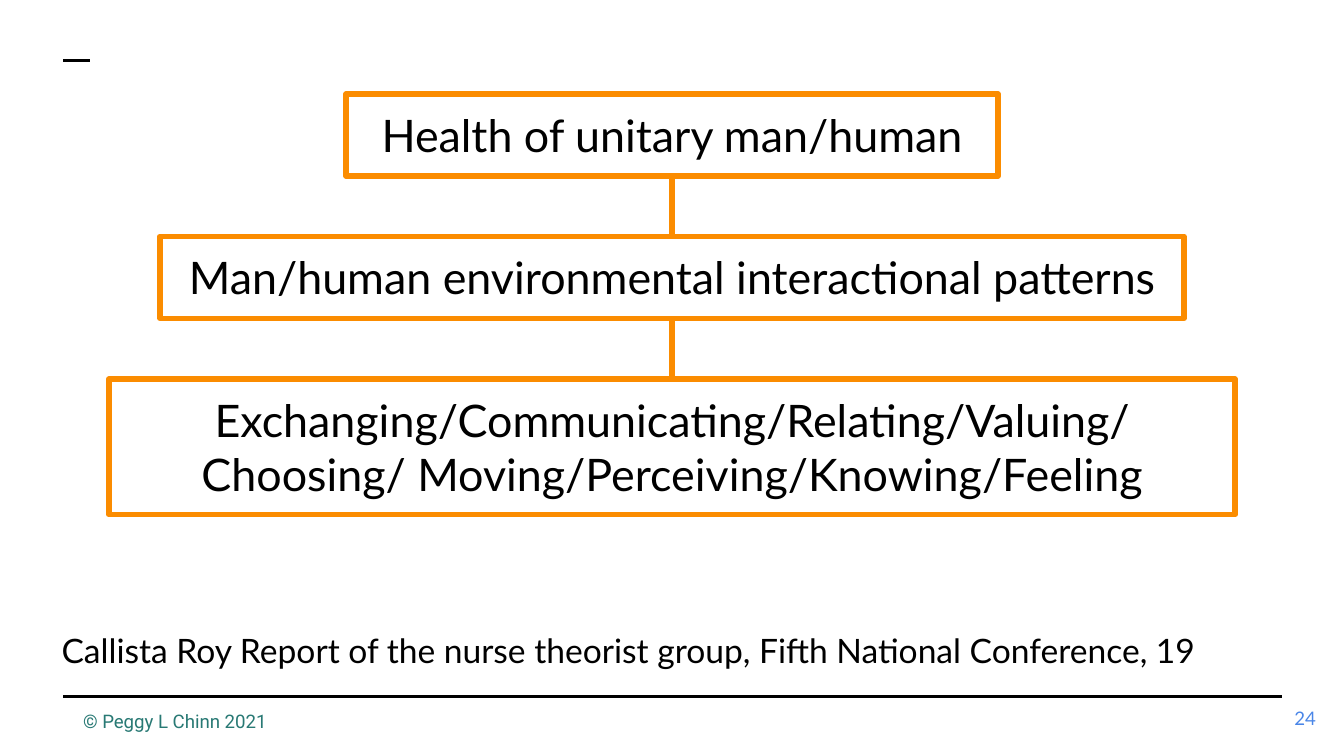
import pptx
import pptx.util
import pptx.dml.color
import pptx.enum.shapes
import pptx.enum.text
import pptx.oxml.ns
import lxml.etree

Inches = pptx.util.Inches
Pt = pptx.util.Pt
RGBColor = pptx.dml.color.RGBColor
Align = pptx.enum.text.PP_ALIGN
Anchor = pptx.enum.text.MSO_ANCHOR

BLACK = RGBColor(0x00, 0x00, 0x00)
ORANGE = RGBColor(0xFB, 0x8C, 0x00)
TEAL = RGBColor(0x28, 0x79, 0x74)
BLUE = RGBColor(0x4A, 0x86, 0xE8)

# Widescreen page, 16:9
PAGE_WIDTH = 10
PAGE_HEIGHT = PAGE_WIDTH * 9 / 16
FIRST_TOP, BOX_GAP = 0.7, 0.45

# Wording, width and height of each level, from top to bottom
LEVELS = [
    ("Health of unitary man/human", 4.85, 0.61),
    ("Man/human environmental interactional patterns", 7.62, 0.61),
    ("Exchanging/Communicating/Relating/Valuing/Choosing/ "
     "Moving/Perceiving/Knowing/Feeling", 8.38, 1.01),
]


def write_text(shape, text, size, color, font="Lato", align=Align.LEFT, anchor=Anchor.TOP):
    frame = shape.text_frame
    frame.word_wrap = True
    frame.vertical_anchor = anchor
    frame.margin_left = frame.margin_right = Inches(0.1)
    frame.margin_top = frame.margin_bottom = Inches(0.1)
    para = frame.paragraphs[0]
    para.text = text
    para.alignment = align
    para.font.name = font
    para.font.size = Pt(size)
    para.font.color.rgb = color


def add_label(page, left, top, width, height, text, size, color, **style):
    box = page.shapes.add_textbox(Inches(left), Inches(top), Inches(width), Inches(height))
    write_text(box, text, size, color, **style)


def add_level(page, top, text, width, height):
    left = (PAGE_WIDTH - width) / 2
    box = page.shapes.add_shape(
        pptx.enum.shapes.MSO_SHAPE.RECTANGLE,
        Inches(left), Inches(top), Inches(width), Inches(height))
    box.shadow.inherit = False
    box.fill.background()
    box.line.color.rgb = ORANGE
    box.line.width = Pt(3)
    write_text(box, text, 24, BLACK, align=Align.CENTER)
    return box


def add_line(page, start_x, start_y, end_x, end_y, color, width):
    line = page.shapes.add_connector(
        pptx.enum.shapes.MSO_CONNECTOR.STRAIGHT,
        Inches(start_x), Inches(start_y), Inches(end_x), Inches(end_y))
    line.line.color.rgb = color
    line.line.width = Pt(width)
    lxml.etree.SubElement(line._element.spPr, pptx.oxml.ns.qn("a:effectLst"))
    return line


def add_hierarchy(page):
    top = FIRST_TOP
    upper = None
    for text, width, height in LEVELS:
        box = add_level(page, top, text, width, height)
        if upper is not None:
            middle = PAGE_WIDTH / 2
            link = add_line(page, middle, top - BOX_GAP, middle, top, ORANGE, 3)
            link.begin_connect(upper, 2)
            link.end_connect(box, 0)
        upper = box
        top += height + BOX_GAP


def main():
    deck = pptx.Presentation()
    deck.slide_width = Inches(PAGE_WIDTH)
    deck.slide_height = Inches(PAGE_HEIGHT)
    page = deck.slides.add_slide(deck.slide_layouts[6])

    # Rules and footer
    add_label(page, 0.52, 5.2, 2.83, 0.31, "© Peggy L Chinn 2021", 10, TEAL, font="Roboto")
    add_line(page, 0.47, 5.18, 9.54, 5.18, BLACK, 1.5)
    add_line(page, 0.47, 0.45, 0.67, 0.45, BLACK, 1.5)
    add_label(page, 9.29, 5.13, 0.6, 0.43, "24", 10, BLUE,
              align=Align.RIGHT, anchor=Anchor.MIDDLE)

    # Source of the diagram
    add_label(page, 0.36, 4.62, 9.17, 0.43,
              "Callista Roy Report of the nurse theorist group, Fifth National Conference, 19",
              18, BLACK, anchor=Anchor.MIDDLE)

    # Linked levels
    add_hierarchy(page)

    deck.save("out.pptx")


if __name__ == "__main__":
    main()
